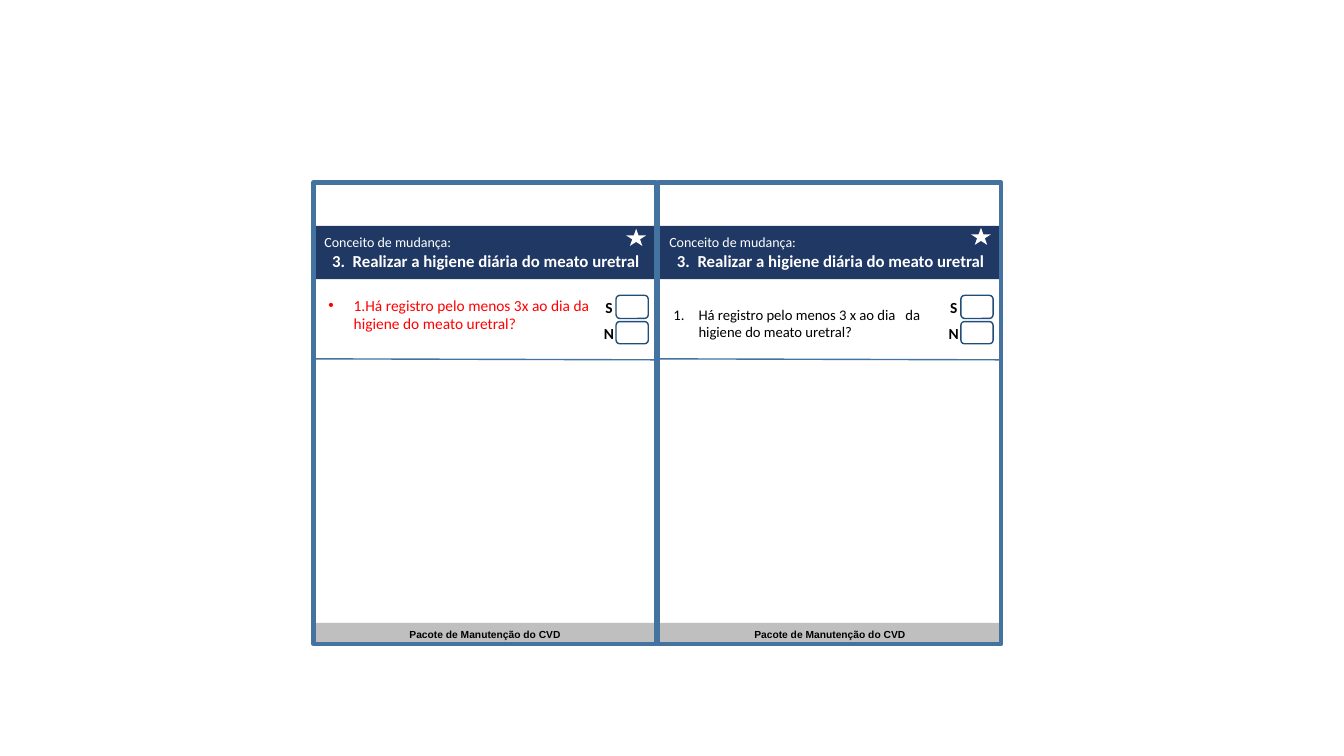
from lxml.etree import SubElement
from pptx import Presentation
from pptx.dml.color import RGBColor
from pptx.enum.shapes import MSO_CONNECTOR, MSO_SHAPE
from pptx.enum.text import MSO_ANCHOR, PP_ALIGN
from pptx.oxml.ns import qn
from pptx.util import Inches, Pt

COLORS = {
    "navy": "203864", "frame": "43739E", "box": "1F4E79", "footer": "BFBFBF",
    "white": "FFFFFF", "black": "000000", "red": "FF0000",
}
CARD_TOP, CARD_WIDTH, CARD_HEIGHT = 1.81, 3.4, 4.58
CARD_LEFT, CARD_STEP = 3.11, 3.42


def color(name):
    return RGBColor.from_string(COLORS[name])


def add_box(slide, kind, left, top, width, height, fill=None, line=None, weight=1):
    box = slide.shapes.add_shape(kind, Inches(left), Inches(top), Inches(width), Inches(height))
    box.shadow.inherit = False
    if fill:
        box.fill.solid()
        box.fill.fore_color.rgb = color(fill)
    else:
        box.fill.background()
    if line:
        box.line.color.rgb = color(line)
        box.line.width = Pt(weight)
    else:
        box.line.fill.background()
    return box


def add_text_area(slide, left, top, width, height):
    area = slide.shapes.add_textbox(Inches(left), Inches(top), Inches(width), Inches(height))
    area.text_frame.word_wrap = True
    area.text_frame.vertical_anchor = MSO_ANCHOR.MIDDLE
    return area.text_frame


def write(paragraph, text, size, ink, bold=False, font="Calibri", align=PP_ALIGN.LEFT):
    paragraph.text = text
    paragraph.alignment = align
    for run in paragraph.runs:
        run.font.name = font
        run.font.size = Pt(size)
        run.font.bold = bold
        run.font.color.rgb = color(ink)


def add_marker(paragraph, tag, **attributes):
    """Give the paragraph a hanging indent and a bullet or number."""
    properties = paragraph._p.get_or_add_pPr()
    properties.set("marL", str(Inches(0.25)))
    properties.set("indent", str(-Inches(0.25)))
    SubElement(properties, qn("a:buFont"), typeface="Arial" if tag == "a:buChar" else "+mj-lt")
    SubElement(properties, qn(tag), **attributes)


def add_footer(slide, left, top):
    footer = add_box(slide, MSO_SHAPE.RECTANGLE, left, top + 4.37, CARD_WIDTH, 0.22, "footer")
    write(footer.text_frame.paragraphs[0], "Pacote de Manutenção do CVD", 7.3, "black",
          bold=True, font="Arial", align=PP_ALIGN.CENTER)


def add_heading(slide, left, top):
    heading = add_box(slide, MSO_SHAPE.RECTANGLE, left + 0.01, top + 0.43, CARD_WIDTH, 0.53, "navy")
    heading.text_frame.vertical_anchor = MSO_ANCHOR.MIDDLE
    write(heading.text_frame.paragraphs[0], "Conceito de mudança:", 10, "white")
    write(heading.text_frame.add_paragraph(), "3.  Realizar a higiene diária do meato uretral",
          12, "white", bold=True, align=PP_ALIGN.CENTER)


def add_question(slide, left, top, text, size, ink, marker, bottom_margin):
    question = add_text_area(slide, left + 0.05, top + 1.14, 2.8, 0.51)
    question.margin_bottom = Inches(bottom_margin)
    write(question.paragraphs[0], text, size, ink)
    tag, attributes = marker
    add_marker(question.paragraphs[0], tag, **attributes)


def add_answers(slide, left, top):
    for letter, box_top, box_height, letter_top, letter_height in (
            ("S", 1.12, 0.23, 1.15, 0.17), ("N", 1.38, 0.22, 1.43, 0.14)):
        add_box(slide, MSO_SHAPE.ROUNDED_RECTANGLE, left + 3, top + box_top, 0.32, box_height,
                line="box")
        label = add_text_area(slide, left + 2.81, top + letter_top, 0.24, letter_height)
        label.margin_left = label.margin_right = label.margin_top = label.margin_bottom = 0
        write(label.paragraphs[0], letter, 11, "black", bold=True, align=PP_ALIGN.CENTER)


def add_frame(slide, left, top):
    """Outline the card and rule off the question."""
    add_box(slide, MSO_SHAPE.RECTANGLE, left, top, CARD_WIDTH, CARD_HEIGHT, line="frame", weight=3)
    divider = slide.shapes.add_connector(
        MSO_CONNECTOR.STRAIGHT, Inches(left + 0.01), Inches(top + 1.75),
        Inches(left + CARD_WIDTH), Inches(top + 1.76))
    divider.line.color.rgb = color("frame")
    divider.line.width = Pt(1)
    SubElement(divider._element.spPr, qn("a:effectLst"))


def add_card(slide, left, top, question, star_top):
    add_footer(slide, left, top)
    add_heading(slide, left, top)
    add_question(slide, left, top, *question)
    add_answers(slide, left, top)
    add_frame(slide, left, top)
    add_box(slide, MSO_SHAPE.STAR_5_POINT, left + 3.1, top + star_top, 0.2, 0.17, "white")


def main():
    presentation = Presentation()
    presentation.slide_width = Inches(13.33)
    presentation.slide_height = Inches(7.5)
    slide = presentation.slides.add_slide(presentation.slide_layouts[6])
    cards = (
        (("1.Há registro pelo menos 3x ao dia da higiene do meato uretral?", 11, "red",
          ("a:buChar", {"char": "•"}), 0.22), 0.46),
        (("Há registro pelo menos 3 x ao dia   da  higiene do meato uretral?", 10.5, "black",
          ("a:buAutoNum", {"type": "arabicPeriod"}), 0.05), 0.45),
    )
    for column, (question, star_top) in enumerate(cards):
        add_card(slide, CARD_LEFT + column * CARD_STEP, CARD_TOP, question, star_top)
    presentation.save("out.pptx")


if __name__ == "__main__":
    main()
